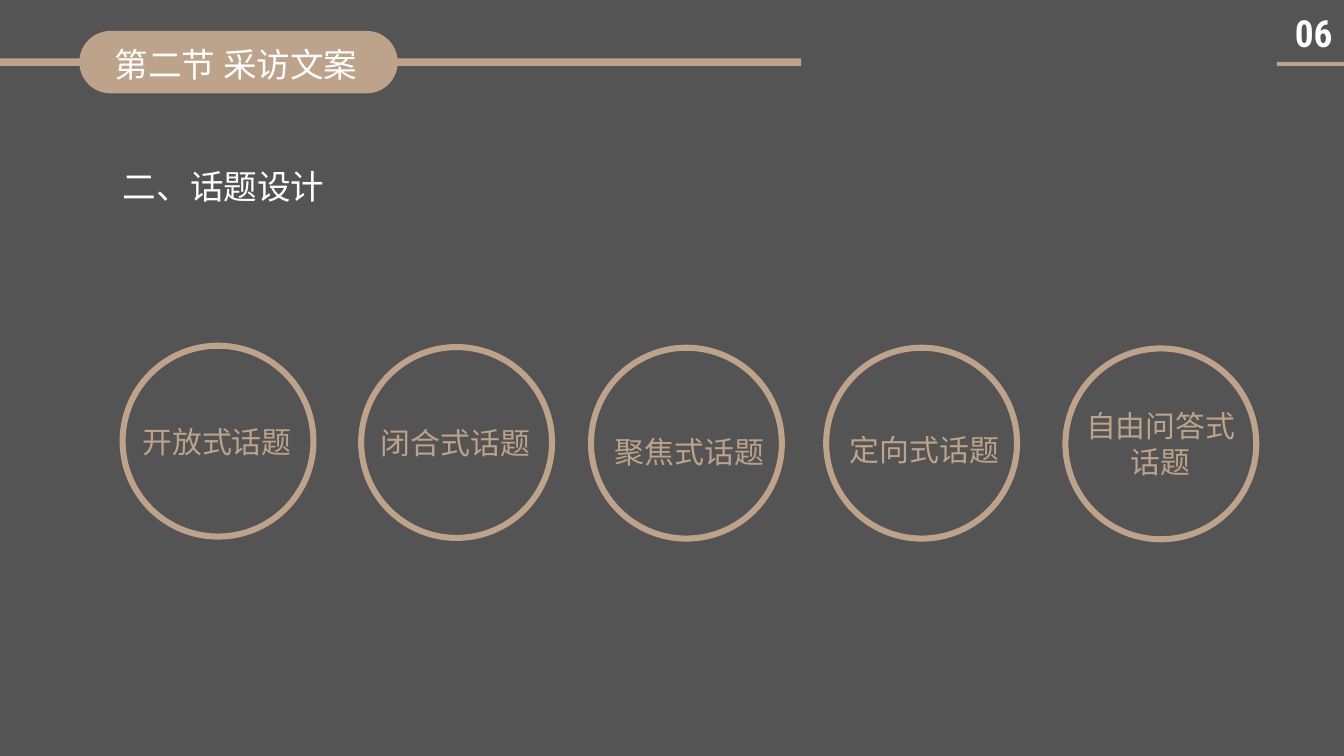
from lxml import etree
from pptx import Presentation
from pptx.dml.color import RGBColor
from pptx.enum.shapes import MSO_SHAPE as SHAPE
from pptx.enum.text import MSO_AUTO_SIZE as AUTO, PP_ALIGN as ALIGN
from pptx.oxml.ns import qn
from pptx.util import Inches, Pt

GREY = RGBColor(0x54, 0x54, 0x54)
TAN = RGBColor(0xBD, 0xA3, 0x89)
WHITE = RGBColor(0xFF, 0xFF, 0xFF)
CJK = "Noto Sans CJK SC"
RING_SIZE = 2.93
RING_BAND = 0.09


class Deck:
    def __init__(self, width, height):
        self.prs = Presentation()
        self.prs.slide_width = Inches(width)
        self.prs.slide_height = Inches(height)
        self.s = self.prs.slides.add_slide(self.prs.slide_layouts[6])
        fill = self.s.background.fill
        fill.solid()
        fill.fore_color.rgb = GREY

    def shape(self, kind, box, adjust=None):
        sp = self.s.shapes.add_shape(kind, *map(Inches, box))
        sp.shadow.inherit = False
        sp.fill.solid()
        sp.fill.fore_color.rgb = TAN
        sp.line.fill.background()
        if adjust is not None:
            sp.adjustments[0] = adjust
        return sp

    def ring(self, left, top):
        return self.shape(SHAPE.DONUT, (left, top, RING_SIZE, RING_SIZE),
                          RING_BAND / RING_SIZE)

    def text(self, box, words, size, color=WHITE, font=CJK, bold=None,
             wrap=True, indent=0, frame=None, para=None):
        tf = self.s.shapes.add_textbox(*map(Inches, box)).text_frame
        frame_format = {"word_wrap": wrap, "auto_size": AUTO.SHAPE_TO_FIT_TEXT}
        for name, value in (frame_format | (frame or {})).items():
            setattr(tf, name, value)
        p = tf.paragraphs[0]
        for name, value in (para or {}).items():
            setattr(p, name, value)
        if indent:
            p._p.get_or_add_pPr().set("indent", str(Inches(indent)))
        r = p.add_run()
        r.text = words
        for name, value in {"size": Pt(size), "name": font, "bold": bold}.items():
            setattr(r.font, name, value)
        r.font.color.rgb = color
        etree.SubElement(r._r.get_or_add_rPr(), qn("a:ea"), typeface=font)


def main():
    deck = Deck(20, 11.25)
    margins = ("margin_left", "margin_top", "margin_right", "margin_bottom")
    deck.text((1.83, 2.17, 15.67, 0.83), "二、话题设计", 36,
              frame=dict.fromkeys(margins, 0), para={"line_spacing": 1.5})
    deck.shape(SHAPE.RECTANGLE, (19, 0.92, 1, 0.06))
    deck.text((19.17, 0.1, 0.81, 0.77), "06", 40, font="Roboto Condensed", bold=True)
    deck.shape(SHAPE.RECTANGLE, (-0.03, 0.87, 11.95, 0.11))
    deck.shape(SHAPE.ROUNDED_RECTANGLE, (1.18, 0.46, 4.74, 0.93), 0.5)
    deck.text((1.61, 0.6, 5.81, 0.71), "第二节 采访文案", 36)

    plain = {"wrap": False}
    indented = {"wrap": False, "indent": 0.87, "para": {"line_spacing": 1.5}}
    centred = {"para": {"alignment": ALIGN.CENTER}}
    topics = [
        ("开放式话题", (1.78, 5.1), (2.02, 6.25, 2.45, 0.64), plain),
        ("闭合式话题", (5.33, 5.12), (5.57, 6.27, 2.45, 0.64), plain),
        ("聚焦式话题", (8.75, 5.13), (8.18, 6.13, 3.32, 0.78), indented),
        ("定向式话题", (12.25, 5.13), (11.68, 6.1, 3.32, 0.78), indented),
        ("自由问答式话题", (15.81, 5.14), (16, 6.02, 2.55, 1.18), centred),
    ]
    for words, corner, box, style in topics:
        deck.ring(*corner)
        deck.text(box, words, 32, TAN, **style)

    deck.prs.save("out.pptx")


if __name__ == "__main__":
    main()
